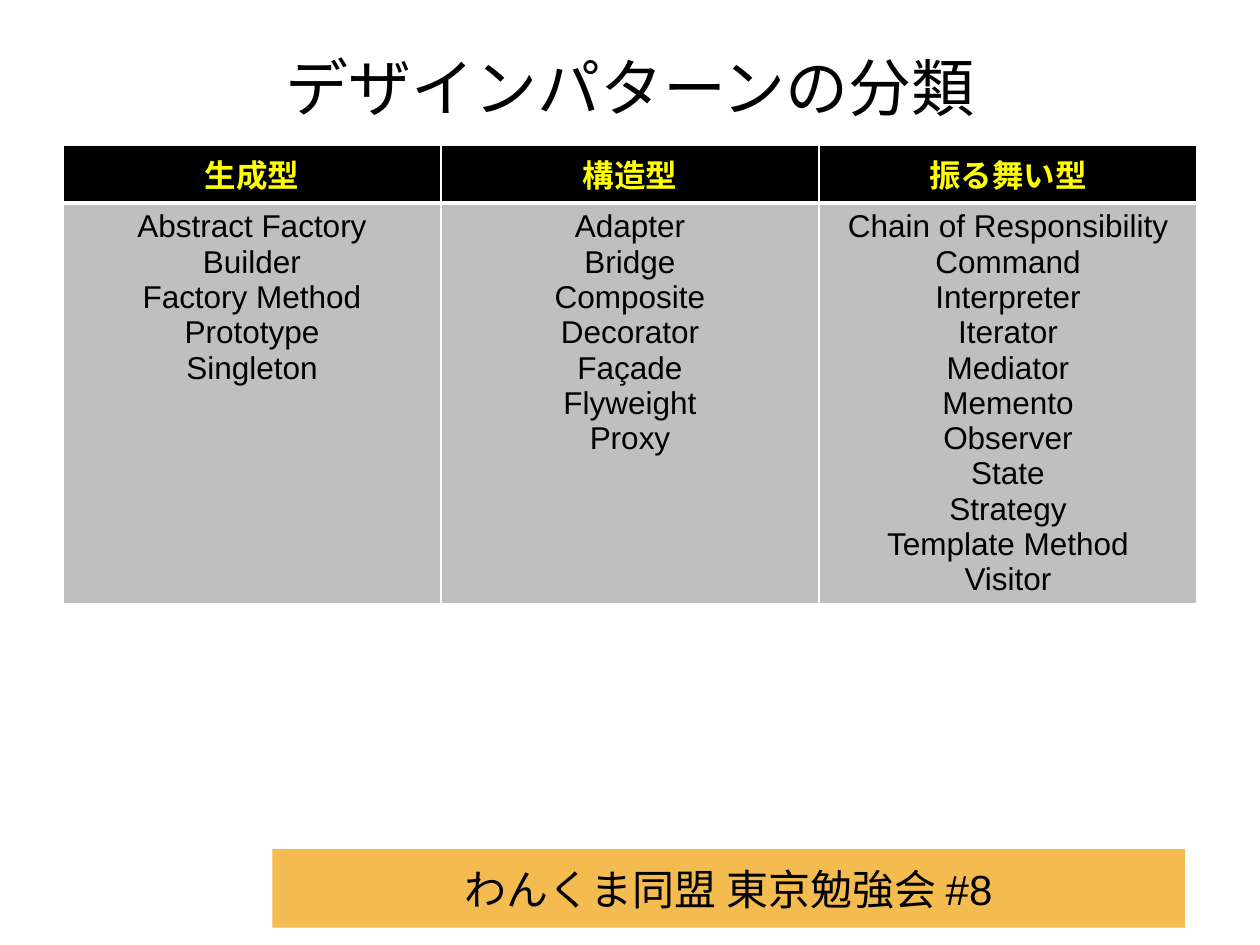
from lxml.etree import SubElement
from pptx import Presentation
from pptx.dml.color import RGBColor
from pptx.enum.shapes import MSO_SHAPE
from pptx.enum.text import MSO_ANCHOR, PP_ALIGN
from pptx.oxml.ns import qn
from pptx.util import Cm, Pt

BLACK = RGBColor(0x00, 0x00, 0x00)
WHITE = RGBColor(0xFF, 0xFF, 0xFF)
YELLOW = RGBColor(0xFF, 0xFF, 0x00)
GRAY = RGBColor(0xBF, 0xBF, 0xBF)
ORANGE = RGBColor(0xF3, 0xBB, 0x50)

PATTERNS = {
    "生成型": ["Abstract Factory", "Builder", "Factory Method", "Prototype", "Singleton"],
    "構造型": ["Adapter", "Bridge", "Composite", "Decorator", "Façade", "Flyweight", "Proxy"],
    "振る舞い型": ["Chain of Responsibility", "Command", "Interpreter", "Iterator",
              "Mediator", "Memento", "Observer", "State", "Strategy",
              "Template Method", "Visitor"],
}


def write_lines(frame, lines, size, color, bold=False):
    frame.text = "\n".join(lines)
    for para in frame.paragraphs:
        para.alignment = PP_ALIGN.CENTER
        para.font.name = "Arial"
        para.font.size = Pt(size)
        para.font.bold = bold
        para.font.color.rgb = color


def set_borders(cell, color, bottom):
    properties = cell._tc.get_or_add_tcPr()
    for side, width in (("L", 1), ("R", 1), ("T", 1), ("B", bottom)):
        line = SubElement(properties, qn(f"a:ln{side}"), w=str(Pt(width)))
        fill = SubElement(line, qn("a:solidFill"))
        SubElement(fill, qn("a:srgbClr"), val=str(color))


def format_cell(cell, lines, fill, color, bold, bottom):
    write_lines(cell.text_frame, lines, 18, color, bold)
    set_borders(cell, WHITE, bottom)
    cell.fill.solid()
    cell.fill.fore_color.rgb = fill


def place_title(page, left, top, width, height):
    title = page.shapes.title
    title.left, title.top, title.width, title.height = left, top, width, height
    title.text_frame.vertical_anchor = MSO_ANCHOR.MIDDLE
    write_lines(title.text_frame, ["デザインパターンの分類"], 36, BLACK)


def add_pattern_table(page, left, top, width, height):
    table = page.shapes.add_table(2, len(PATTERNS), left, top, width, height).table
    header_height = Cm(1.13)
    table.rows[0].height = header_height
    table.rows[1].height = height - header_height
    for column, (category, names) in enumerate(PATTERNS.items()):
        format_cell(table.cell(0, column), [category], BLACK, YELLOW, True, 3)
        format_cell(table.cell(1, column), names, GRAY, BLACK, False, 1)


def add_footer(page, left, top, width, height):
    banner = page.shapes.add_shape(MSO_SHAPE.RECTANGLE, left, top, width, height)
    banner.shadow.inherit = False
    banner.fill.solid()
    banner.fill.fore_color.rgb = ORANGE
    banner.line.fill.background()
    banner.text_frame.vertical_anchor = MSO_ANCHOR.MIDDLE
    write_lines(banner.text_frame, ["わんくま同盟 東京勉強会 #8"], 24, BLACK)


def main():
    deck = Presentation()
    deck.slide_width, deck.slide_height = Cm(25.4), Cm(19.05)
    page = deck.slides.add_slide(deck.slide_layouts[5])
    add_footer(page, Cm(5.49), Cm(17.12), Cm(18.4), Cm(1.58))
    place_title(page, Cm(1.27), Cm(0.76), Cm(22.86), Cm(1.96))
    add_pattern_table(page, Cm(1.27), Cm(2.92), Cm(22.86), Cm(9.2))
    deck.save("out.pptx")


if __name__ == "__main__":
    main()
